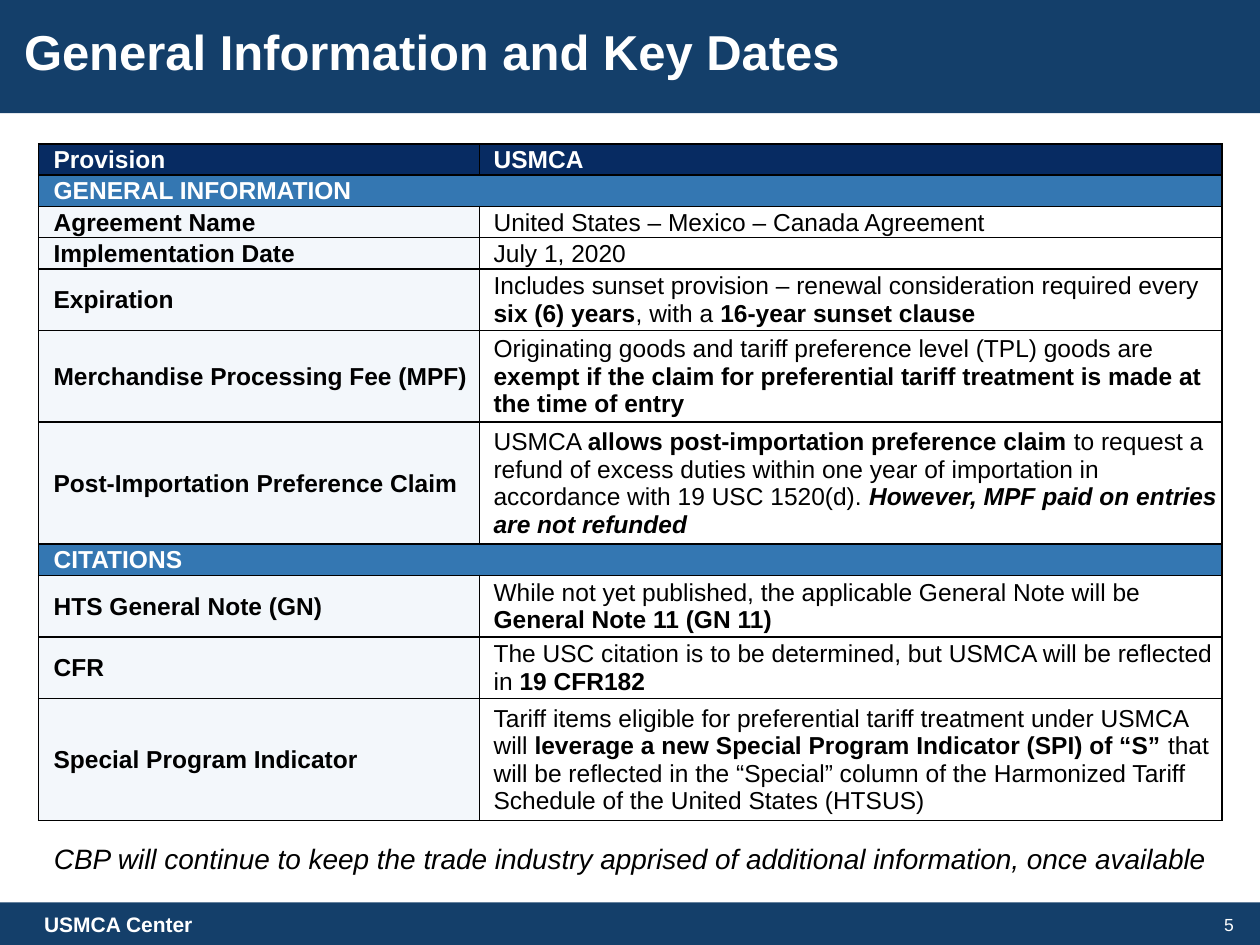
from lxml.etree import SubElement
from pptx import Presentation
from pptx.dml.color import RGBColor
from pptx.enum.shapes import MSO_SHAPE
from pptx.enum.text import MSO_ANCHOR, PP_ALIGN
from pptx.oxml.ns import qn
from pptx.util import Cm, Pt

WHITE, BLACK = "FFFFFF", "000000"
BAR, HEADER, SECTION, LABEL = "143F6A", "072B62", "3477B2", "F3F7FB"

# Each row: label, number of text lines, runs of (text, style)
PROVISIONS = [
    ("Provision", 1, [("USMCA", "b")]),
    ("GENERAL INFORMATION", 1, None),
    ("Agreement Name", 1, [("United States – Mexico – Canada Agreement", "")]),
    ("Implementation Date", 1, [("July 1, 2020", "")]),
    ("Expiration", 2, [
        ("Includes sunset provision – renewal consideration required every ", ""),
        ("six (6) years", "b"), (", with a ", ""),
        ("16-year sunset clause", "b")]),
    ("Merchandise Processing Fee (MPF)", 3, [
        ("Originating goods and tariff preference level (TPL) goods are ", ""),
        ("exempt if the claim for preferential tariff treatment is made at "
         "the time of entry", "b")]),
    ("Post-Importation Preference Claim", 4, [
        ("USMCA ", ""), ("allows post-importation preference claim ", "b"),
        ("to request a refund of excess duties within one year of importation "
         "in accordance with 19 USC 1520(d). ", ""),
        ("However, MPF paid on entries are not refunded", "bi")]),
    ("CITATIONS", 1, None),
    ("HTS General Note (GN)", 2, [
        ("While not yet published, the applicable General Note will be ", ""),
        ("General Note 11 (GN 11)", "b")]),
    ("CFR", 2, [
        ("The USC citation is to be determined, but USMCA will be reflected in ", ""),
        ("19 CFR182", "b")]),
    ("Special Program Indicator", 4, [
        ("Tariff items eligible for preferential tariff treatment under USMCA will ", ""),
        ("leverage a new Special Program Indicator (SPI) of “S”", "b"),
        (" that will be reflected in the “Special” column of the Harmonized "
         "Tariff Schedule of the United States (HTSUS)", "")]),
]


def color(value):
    return RGBColor.from_string(value)


class SlideBuilder:
    def __init__(self, page, font="Arial"):
        self.page = page
        self.font = font

    def add_runs(self, frame, runs, size, ink, align=PP_ALIGN.LEFT):
        para = frame.paragraphs[0]
        para.alignment = align
        for text, style in runs:
            span = para.add_run()
            span.text = text
            span.font.name = self.font
            span.font.size = Pt(size)
            span.font.color.rgb = color(ink)
            span.font.bold = "b" in style
            span.font.italic = "i" in style
        return para

    def bar(self, top, height):
        box = self.page.shapes.add_shape(
            MSO_SHAPE.RECTANGLE, 0, Cm(top), Cm(25.4), Cm(height))
        box.shadow.inherit = False
        box.fill.solid()
        box.fill.fore_color.rgb = color(BAR)
        box.line.fill.background()
        # Keep the bars behind the title placeholder
        box.element.getparent().insert(2, box.element)

    def title(self, text, left, top, width, height):
        box = self.page.shapes.title
        box.left, box.top, box.width, box.height = map(Cm, (left, top, width, height))
        box.text_frame.vertical_anchor = MSO_ANCHOR.MIDDLE
        para = self.add_runs(box.text_frame, [(text, "b")], 28, WHITE)
        para.line_spacing = 0.9

    def text(self, runs, place, size, ink, align=PP_ALIGN.LEFT, inset=0.25):
        box = self.page.shapes.add_textbox(*map(Cm, place))
        frame = box.text_frame
        frame.word_wrap = True
        frame.vertical_anchor = MSO_ANCHOR.MIDDLE
        frame.margin_left = Cm(inset)
        self.add_runs(frame, runs, size, ink, align)

    def cell(self, cell, runs, fill, ink, indent):
        cell.margin_left = Cm(indent)
        cell.margin_right = cell.margin_top = Cm(0.02)
        cell.margin_bottom = 0
        cell.vertical_anchor = MSO_ANCHOR.MIDDLE
        properties = cell._tc.get_or_add_tcPr()
        for side in ("a:lnL", "a:lnR", "a:lnT", "a:lnB"):
            line = SubElement(properties, qn(side), w=str(Pt(1)))
            solid = SubElement(line, qn("a:solidFill"))
            SubElement(solid, qn("a:srgbClr"), val=BLACK)
        if fill:
            cell.fill.solid()
            cell.fill.fore_color.rgb = color(fill)
        else:
            cell.fill.background()
        self.add_runs(cell.text_frame, runs, 14, ink)

    def table(self, rows, left, top, widths):
        heights = [0.61 * lines + 0.02 for _, lines, _ in rows]
        grid = self.page.shapes.add_table(
            len(rows), len(widths), Cm(left), Cm(top),
            Cm(sum(widths)), Cm(sum(heights))).table
        grid.first_row = grid.horz_banding = False
        for column, width in zip(grid.columns, widths):
            column.width = Cm(width)
        for index, (label, _, runs) in enumerate(rows):
            grid.rows[index].height = Cm(heights[index])
            name, value = grid.cell(index, 0), grid.cell(index, 1)
            if index == 0:
                fills, ink = (HEADER, HEADER), WHITE
            elif runs is None:
                fills, ink = (SECTION, SECTION), WHITE
                name.merge(value)
            else:
                fills, ink = (LABEL, None), BLACK
            self.cell(name, [(label, "b")], fills[0], ink, 0.3)
            self.cell(value, runs or [], fills[1], ink, 0.28)


def main():
    deck = Presentation()
    deck.slide_width, deck.slide_height = Cm(25.4), Cm(19.05)
    builder = SlideBuilder(deck.slides.add_slide(deck.slide_layouts[5]))

    # Header and footer bars
    builder.bar(0, 2.28)
    builder.bar(18.19, 0.86)
    builder.title("General Information and Key Dates", 0.23, 0.46, 22.55, 1.3)
    builder.text([("5", "")], (20.02, 18.19, 5.1, 0.91), 10, WHITE, PP_ALIGN.RIGHT)
    builder.text([("USMCA Center", "b")], (0, 18.19, 10.16, 0.86), 12, WHITE, inset=0.89)

    # Provisions table
    builder.table(PROVISIONS, 0.78, 2.9, (8.89, 14.96))

    # Closing note
    builder.text([("CBP will continue to keep the trade industry apprised of "
                   "additional information, once available", "i")],
                 (0.78, 16.84, 23.85, 0.94), 16, BLACK, PP_ALIGN.CENTER)

    deck.save("out.pptx")


if __name__ == "__main__":
    main()
